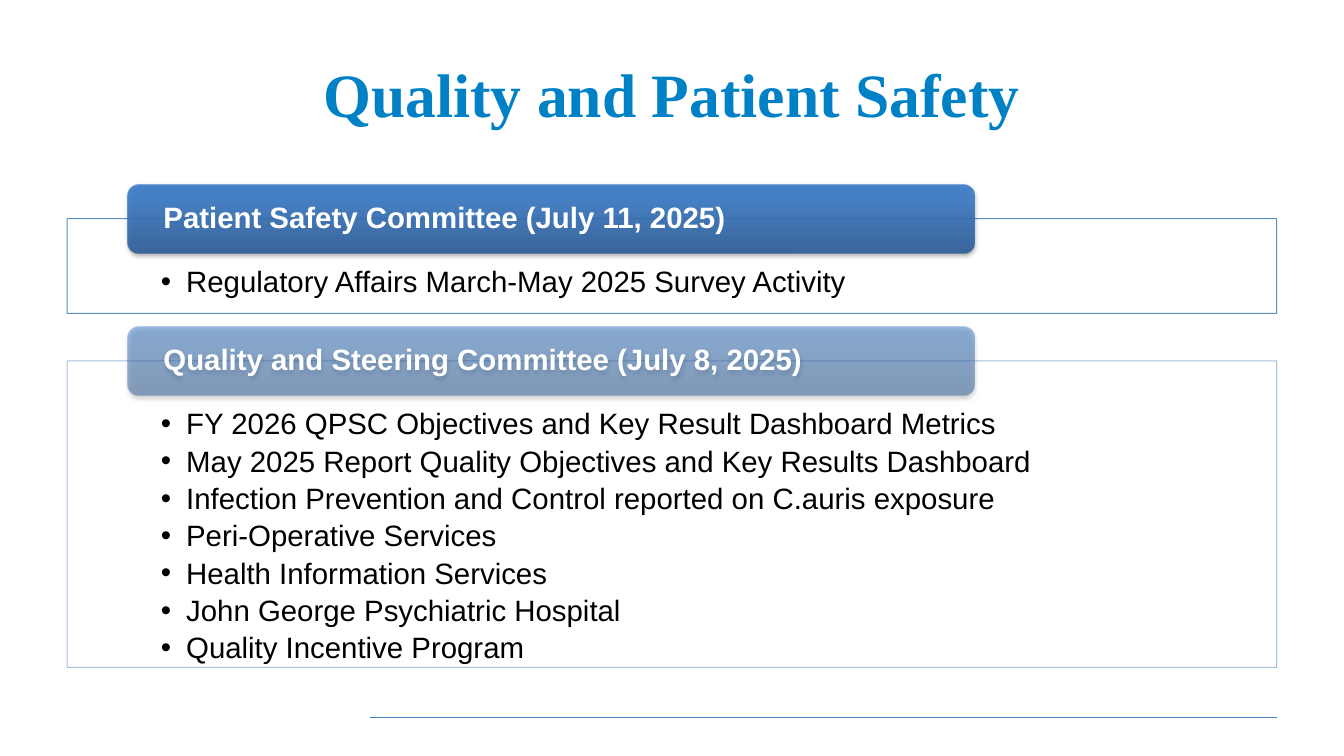
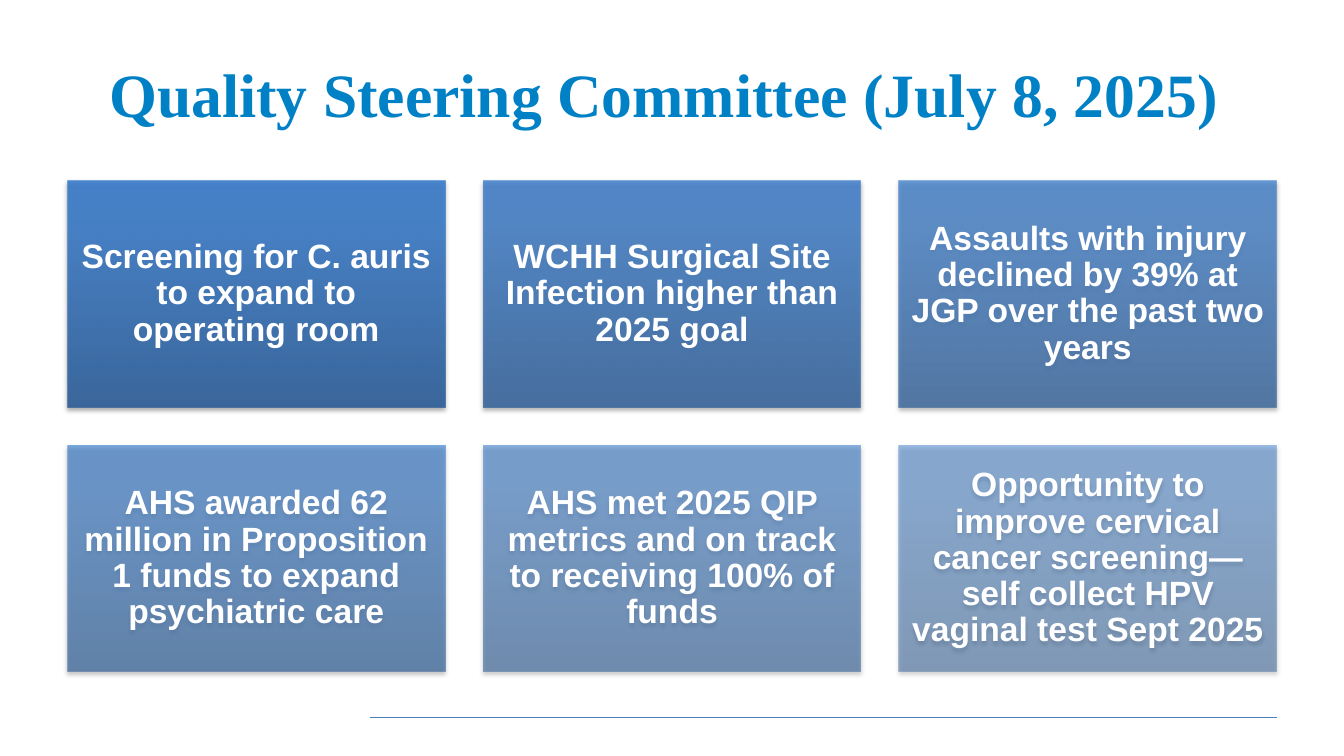
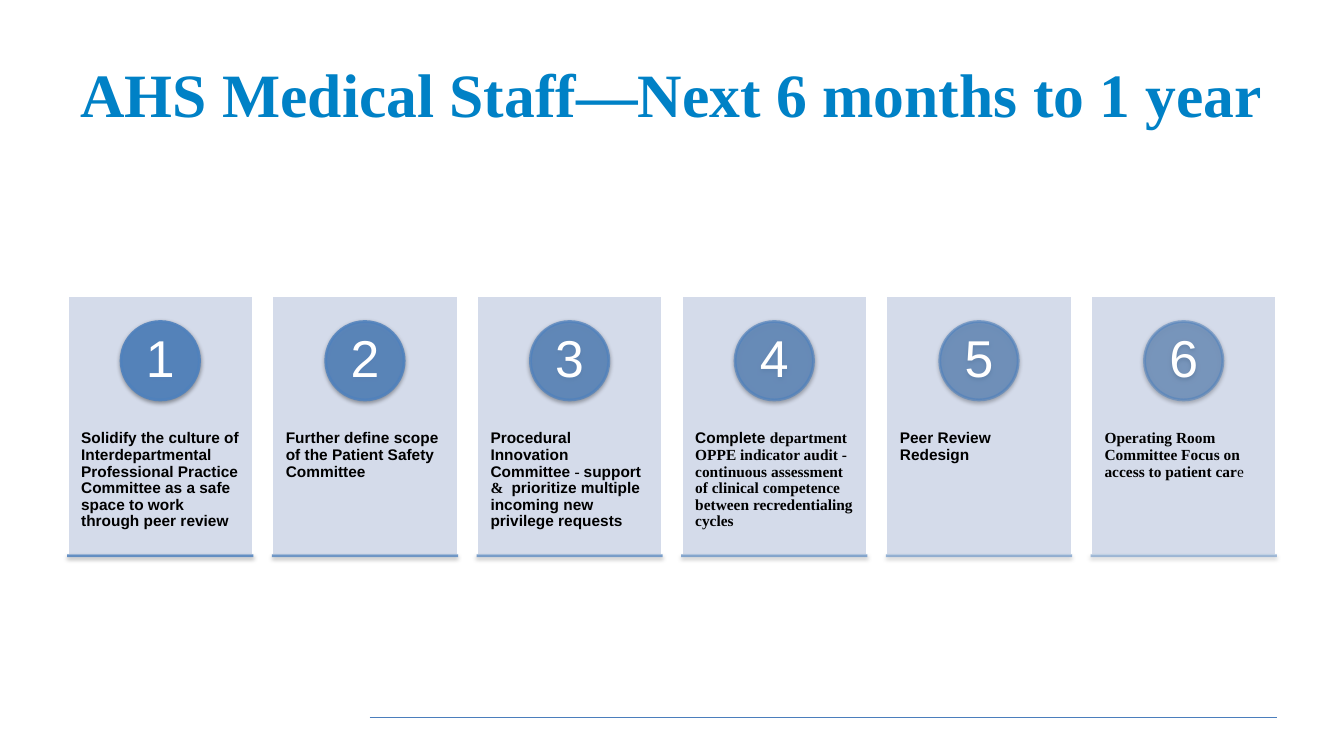
from copy import deepcopy

from lxml.etree import SubElement
from pptx import Presentation
from pptx.dml.color import RGBColor
from pptx.enum.shapes import MSO_CONNECTOR, MSO_SHAPE
from pptx.enum.text import MSO_ANCHOR, MSO_AUTO_SIZE, PP_ALIGN
from pptx.oxml.ns import qn
from pptx.util import Pt

TITLE_BLUE = RGBColor(0x00, 0x81, 0xC6)
RULE_BLUE = RGBColor(0x4B, 0x7E, 0xBC)
ACCENT_BLUE = RGBColor(0x4F, 0x81, 0xBD)
CARD_BLUE = RGBColor(0xD0, 0xD8, 0xE8)
WHITE = RGBColor(0xFF, 0xFF, 0xFF)
BLACK = RGBColor(0x00, 0x00, 0x00)
GRADIENT = [
    (0, RGBColor(0x2F, 0x5F, 0x99)),
    (0.8, RGBColor(0x3D, 0x7C, 0xC7)),
    (1, RGBColor(0x3A, 0x7C, 0xCB)),
]

SANS = "Arial"
SERIF = "Times New Roman"
LEFT = 48
WIDTH = 864

COMMITTEES = [
    (156.2, 67.7, 90, "Patient Safety Committee (July 11, 2025)", [
        "Regulatory Affairs March-May 2025 Survey Activity",
    ]),
    (257.8, 219, 50, "Quality and Steering Committee (July 8, 2025)", [
        "FY 2026 QPSC Objectives and Key Result Dashboard Metrics",
        "May 2025 Report Quality Objectives and Key Results Dashboard",
        "Infection Prevention and Control reported on C.auris exposure",
        "Peri-Operative Services",
        "Health Information Services",
        "John George Psychiatric Hospital",
        "Quality Incentive Program",
    ]),
]

HIGHLIGHTS = [
    "Screening for C. auris to expand to operating room",
    "WCHH Surgical Site Infection higher than 2025 goal",
    "Assaults with injury declined by 39% at JGP over the past two years",
    "AHS awarded 62 million in Proposition 1 funds to expand psychiatric care",
    "AHS met 2025 QIP metrics and on track to receiving 100% of funds",
    "Opportunity to improve cervical cancer screening—self collect HPV vaginal test Sept 2025",
]

GOALS = [
    [("Solidify the culture of Interdepartmental Professional Practice Committee "
      "as a safe space to work through peer review", SANS, True)],
    [("Further define scope of the Patient Safety Committee", SANS, True)],
    [("Procedural Innovation Committee ", SANS, True),
     ("- ", SERIF, True),
     ("support ", SANS, True),
     ("& ", SERIF, True),
     (" prioritize multiple incoming new privilege requests", SANS, True)],
    [("Complete ", SANS, True),
     ("department OPPE indicator audit - continuous assessment of clinical "
      "competence between recredentialing cycles", SERIF, True)],
    [("Peer Review Redesign", SANS, True)],
    [("Operating Room Committee Focus on access to patient car", SERIF, True),
     ("e", SERIF, False)],
]


def set_opacity(shape, percent):
    for color in shape._element.spPr.iter(qn("a:srgbClr")):
        SubElement(color, qn("a:alpha")).set("val", str(round(percent * 1000)))


def add_shadow(shape, distance, opacity):
    properties = shape._element.spPr
    effects = properties.find(qn("a:effectLst"))
    if effects is None:
        effects = SubElement(properties, qn("a:effectLst"))
    shadow = SubElement(effects, qn("a:outerShdw"), blurRad=str(Pt(3.1)),
                        dist=str(Pt(distance)), dir="5400000", rotWithShape="0")
    color = SubElement(shadow, qn("a:srgbClr"), val=str(BLACK))
    SubElement(color, qn("a:alpha"), val=str(opacity * 1000))


def add_block(slide, kind, left, top, width, height, fill=None):
    shape = slide.shapes.add_shape(kind, Pt(left), Pt(top), Pt(width), Pt(height))
    shape.shadow.inherit = False
    shape.line.fill.background()
    if fill is not None:
        shape.fill.solid()
        shape.fill.fore_color.rgb = fill
    return shape


def outline(shape, color, width):
    shape.line.color.rgb = color
    shape.line.width = Pt(width)


def add_gradient_block(slide, kind, left, top, width, height, opacity):
    shape = add_block(slide, kind, left, top, width, height)
    shape.fill.gradient()
    shape.fill.gradient_angle = 90
    stop_list = next(shape._element.spPr.iter(qn("a:gsLst")))
    stop_list.append(deepcopy(stop_list[-1]))
    for stop, (position, color) in zip(shape.fill.gradient_stops, GRADIENT):
        stop.position = position
        stop.color.rgb = color
    set_opacity(shape, opacity)
    add_shadow(shape, 1.8, 35)
    return shape


def add_line(slide, left, y, width, color, weight):
    line = slide.shapes.add_connector(
        MSO_CONNECTOR.STRAIGHT, Pt(left), Pt(y), Pt(left + width), Pt(y))
    outline(line, color, weight)
    SubElement(line._element.spPr, qn("a:effectLst"))
    return line


def set_frame(shape, anchor, horizontal, top, bottom):
    frame = shape.text_frame
    frame.word_wrap = True
    frame.auto_size = MSO_AUTO_SIZE.NONE
    frame.vertical_anchor = anchor
    frame.margin_left = frame.margin_right = Pt(horizontal)
    frame.margin_top, frame.margin_bottom = Pt(top), Pt(bottom)
    return frame


def format_paragraph(paragraph, size, color, bold=False, font=SANS,
                     alignment=PP_ALIGN.LEFT, spacing=0.9):
    paragraph.alignment = alignment
    paragraph.line_spacing = spacing
    paragraph.font.size = Pt(size)
    paragraph.font.color.rgb = color
    paragraph.font.bold = bold
    paragraph.font.name = font


def write_label(shape, text, size, horizontal, vertical, bold=True,
                alignment=PP_ALIGN.CENTER):
    frame = set_frame(shape, MSO_ANCHOR.MIDDLE, horizontal, vertical, vertical)
    frame.text = text
    format_paragraph(frame.paragraphs[0], size, WHITE, bold, alignment=alignment)


def write_bullets(shape, items):
    frame = set_frame(shape, MSO_ANCHOR.TOP, 67, 34.6, 11.5)
    frame.text = "\n".join(items)
    for paragraph in frame.paragraphs:
        paragraph.space_after = Pt(4)
        properties = paragraph._p.get_or_add_pPr()
        properties.set("marL", str(Pt(18)))
        properties.set("indent", str(-Pt(18)))
        SubElement(properties, qn("a:buFont"), typeface=SANS)
        SubElement(properties, qn("a:buChar"), char="•")
        format_paragraph(paragraph, 21, BLACK)


def write_goal(card, runs):
    frame = set_frame(card, MSO_ANCHOR.TOP, 10, 96.5, 0)
    paragraph = frame.paragraphs[0]
    for text, font, bold in runs:
        run = paragraph.add_run()
        run.text = text
        run.font.name = font
        run.font.bold = bold
    paragraph.alignment = PP_ALIGN.LEFT
    paragraph.line_spacing = 0.9
    paragraph.font.size = Pt(11)
    paragraph.font.color.rgb = BLACK


def add_titled_slide(presentation, text):
    slide = presentation.slides.add_slide(presentation.slide_layouts[5])
    title = slide.shapes.title
    title.left, title.top, title.width, title.height = Pt(LEFT), Pt(21.6), Pt(WIDTH), Pt(90)
    frame = set_frame(title, MSO_ANCHOR.MIDDLE, 7.2, 3.6, 3.6)
    frame.text = text
    format_paragraph(frame.paragraphs[0], 44, TITLE_BLUE, True, SERIF,
                     PP_ALIGN.CENTER, 1.0)
    add_line(slide, 264, 512.6, 648, RULE_BLUE, 0.75)
    return slide


def add_committee(slide, top, height, opacity, heading, items):
    panel = add_block(slide, MSO_SHAPE.RECTANGLE, LEFT, top, WIDTH, height, WHITE)
    outline(panel, ACCENT_BLUE, 0.75)
    set_opacity(panel, opacity)
    write_bullets(panel, items)
    header = add_gradient_block(slide, MSO_SHAPE.ROUNDED_RECTANGLE,
                                91.4, top - 24.5, 604.8, 49, opacity)
    write_label(header, heading, 21, 23, 0, alignment=PP_ALIGN.LEFT)


def add_highlights(slide):
    width, height, gap = 270, 162, 27
    for index, text in enumerate(HIGHLIGHTS):
        row, column = divmod(index, 3)
        tile = add_gradient_block(
            slide, MSO_SHAPE.RECTANGLE, LEFT + column * (width + gap),
            128.9 + row * (height + gap), width, height, 90 - 8 * index)
        write_label(tile, text, 24, 7.2, 7.2)


def add_goal(slide, index, runs):
    width, top, height, diameter = 133, 211, 186, 56
    left = LEFT + index * (WIDTH - width) / (len(GOALS) - 1)
    fade = 40 / (2 * len(GOALS) - 1)
    opacity = 90 - 2 * index * fade

    card = add_block(slide, MSO_SHAPE.RECTANGLE, left, top, width, height, CARD_BLUE)
    set_opacity(card, 90)
    outline(card, WHITE, 2)
    write_goal(card, runs)

    badge = add_block(slide, MSO_SHAPE.OVAL, left + (width - diameter) / 2,
                      top + 18.7, diameter, diameter, ACCENT_BLUE)
    outline(badge, ACCENT_BLUE, 2)
    set_opacity(badge, opacity)
    add_shadow(badge, 1.6, 38)
    write_label(badge, str(index + 1), 37, 4.4, 1, bold=False)

    base = add_line(slide, left, top + height, width, ACCENT_BLUE, 2)
    set_opacity(base, opacity - fade)
    add_shadow(base, 1.6, 38)


def main():
    presentation = Presentation()
    presentation.slide_width, presentation.slide_height = Pt(960), Pt(540)

    slide = add_titled_slide(presentation, "Quality and Patient Safety")
    for committee in COMMITTEES:
        add_committee(slide, *committee)

    slide = add_titled_slide(presentation, "Quality Steering Committee (July 8, 2025) ")
    add_highlights(slide)

    slide = add_titled_slide(presentation, "AHS Medical Staff—Next 6 months to 1 year")
    for index, runs in enumerate(GOALS):
        add_goal(slide, index, runs)

    presentation.save("out.pptx")


if __name__ == "__main__":
    main()
